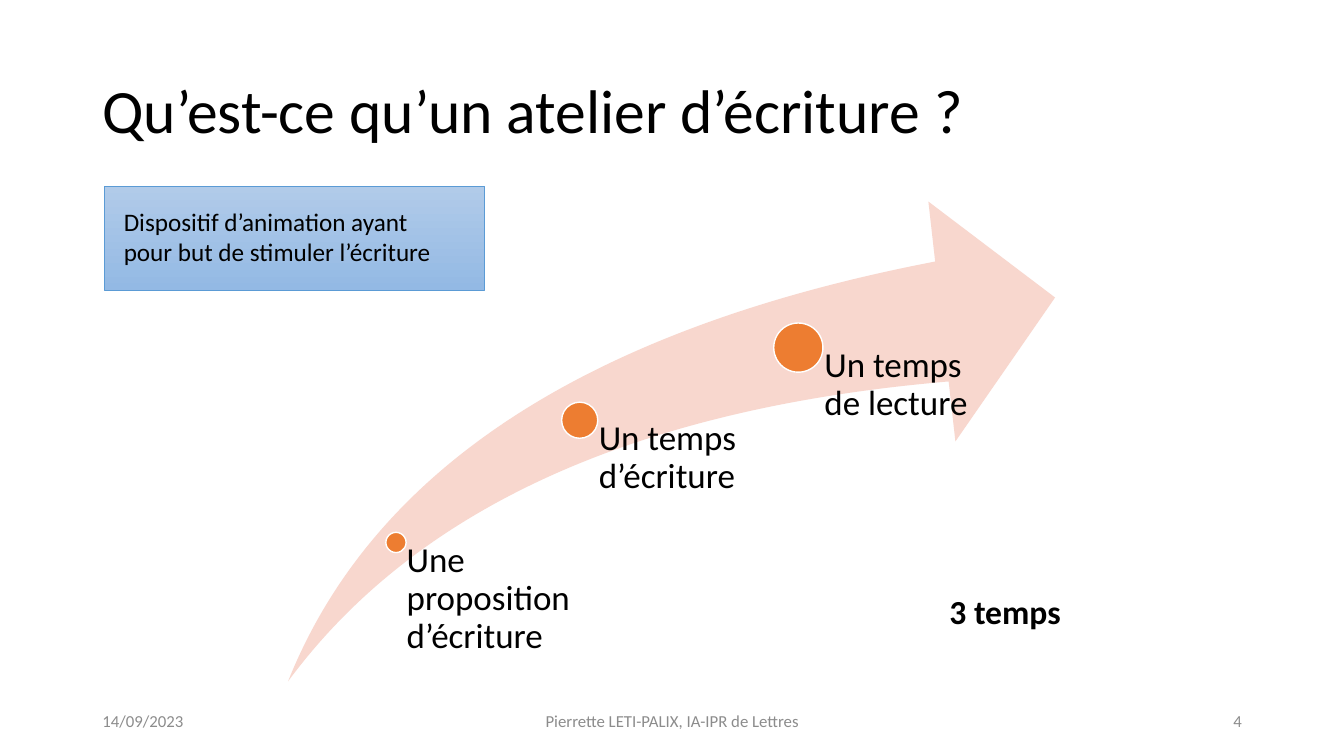
from pptx import Presentation
from pptx.dml.color import RGBColor
from pptx.enum.shapes import MSO_SHAPE as Shape
from pptx.enum.text import MSO_ANCHOR as Anchor, MSO_AUTO_SIZE as AutoSize, PP_ALIGN as Align
from pptx.util import Cm, Pt

BLACK, GREY, WHITE, ORANGE = "000000", "8C8C8C", "FFFFFF", "ED7D31"
ARROW_BOTTOM = 17.17
STEPS = [
    ("Une proposition d’écriture", 9.98, 13.67, 0.51, 4.5),
    ("Un temps d’écriture", 14.61, 10.59, 0.91, 4.65),
    ("Un temps de lecture", 20.12, 8.76, 1.24, 4.65),
]
FOOTERS = [
    ("14/09/2023", 2.33, 7.62, Align.LEFT),
    ("Pierrette LETI-PALIX, IA-IPR de Lettres", 11.23, 11.43, Align.CENTER),
    ("4", 23.93, 7.62, Align.RIGHT),
]


def colour(value):
    return RGBColor.from_string(value)


def apply(target, values):
    for name, value in values.items():
        setattr(target, name, value)


class Page:
    """Draws styled elements on one slide."""

    font = "Calibri"

    def __init__(self, deck):
        self.slide = deck.slides.add_slide(deck.slide_layouts[5])
        self.shapes = self.slide.shapes

    def fill_text(self, box, words, size, ink=BLACK, bold=False, frame=None, **layout):
        text = box.text_frame
        apply(text, {"word_wrap": True, "auto_size": AutoSize.NONE, **(frame or {})})
        para = text.paragraphs[0]
        apply(para, {"alignment": Align.LEFT, **layout})
        span = para.add_run()
        span.text = words
        apply(span.font, {"name": self.font, "size": Pt(size), "bold": bold})
        span.font.color.rgb = colour(ink)

    def title(self, words, area):
        box = self.shapes.title
        apply(box, dict(zip(("left", "top", "width", "height"), map(Cm, area))))
        self.fill_text(box, words, 44, frame={"vertical_anchor": Anchor.MIDDLE}, line_spacing=0.9)

    def text(self, words, area, size, **style):
        self.fill_text(self.shapes.add_textbox(*map(Cm, area)), words, size, **style)

    def shape(self, kind, area, fills, line=None, weight=1):
        shape = self.shapes.add_shape(kind, *map(Cm, area))
        shape.shadow.inherit = False
        if len(fills) > 1:
            shape.fill.gradient()
            shape.fill.gradient_angle = 270
            for stop, value in zip(shape.fill.gradient_stops, fills):
                stop.color.rgb = colour(value)
        else:
            shape.fill.solid()
            shape.fill.fore_color.rgb = colour(fills[0])
        if line:
            shape.line.color.rgb = colour(line)
            shape.line.width = Pt(weight)
        else:
            shape.line.fill.background()
        return shape

    def step(self, words, x, y, diameter, width):
        corner = (x - diameter / 2, y - diameter / 2)
        self.shape(Shape.OVAL, (*corner, diameter, diameter), [ORANGE], WHITE)
        frame = {"margin_left": Cm(0.53 * diameter), "margin_top": 0,
                 "margin_right": 0, "margin_bottom": 0}
        self.text(words, (x, y, width, ARROW_BOTTOM - y), 25, frame=frame, line_spacing=0.9)


def main():
    deck = Presentation()
    apply(deck, {"slide_width": Cm(33.87), "slide_height": Cm(19.05)})
    page = Page(deck)
    page.shape(Shape.RECTANGLE, (2.62, 4.7, 9.6, 2.62), ["B1CBE9", "93B9E4"], "5B9BD5", 0.5)
    page.title("Qu’est-ce qu’un atelier d’écriture ?", (2.33, 1.02, 29.21, 3.68))
    arrow = page.shape(Shape.SWOOSH_ARROW, (7.26, 5.08, 19.33, ARROW_BOTTOM - 5.08), ["F8D7CE"])
    for index in range(2):
        arrow.adjustments[index] = 0.25
    for step in STEPS:
        page.step(*step)
    page.text("Dispositif d’animation ayant pour but de stimuler l’écriture",
              (2.87, 5.08, 8.64, 1.8), 18)
    page.text("3 temps", (21.01, 14.76, 8.64, 1.27), 24, bold=True, alignment=Align.CENTER)
    for words, left, width, side in FOOTERS:
        page.text(words, (left, 17.65, width, 1.02), 12, ink=GREY,
                  frame={"vertical_anchor": Anchor.MIDDLE}, alignment=side)
    deck.save("out.pptx")


if __name__ == "__main__":
    main()
